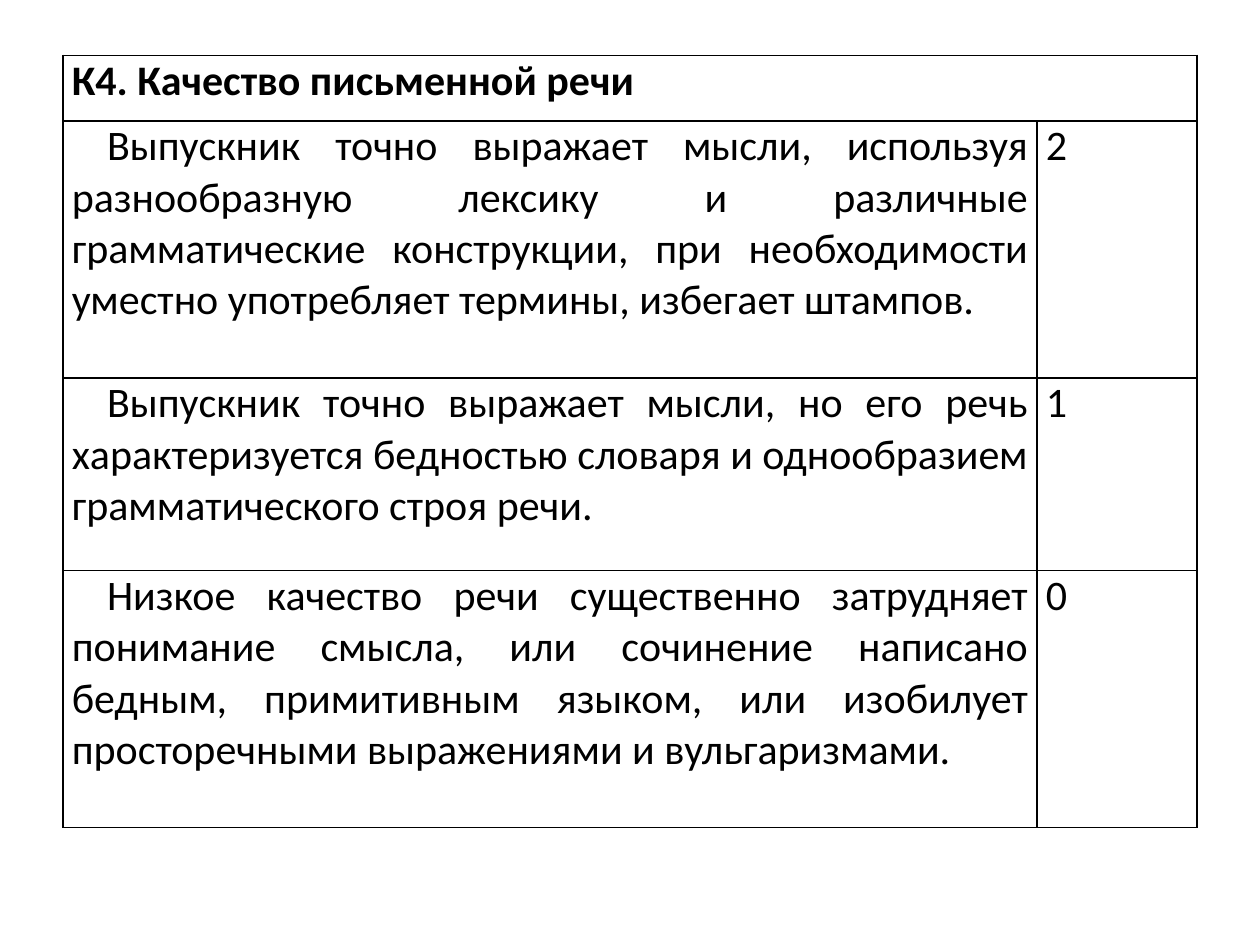
from dataclasses import dataclass

from lxml import etree
from pptx import Presentation
from pptx.dml.color import RGBColor
from pptx.enum.text import PP_ALIGN
from pptx.oxml.ns import qn
from pptx.util import Inches, Pt

JUSTIFY = PP_ALIGN.JUSTIFY
WIDE, HIGH = 10, 7.5
LEFT, TOP = 0.05 * WIDE, 0.44
COLS = (7.73, 1.27)
ROWS = (0.52, 2.04, 1.53, 2.04)
INK, PAPER = "000000", "FFFFFF"
FONT, SIZE = "Calibri", 24
INDENT, PAD = 0.28, 0.07


@dataclass
class Level:
    """A mark and the words that describe it."""

    text: str
    mark: str


TITLE = "К4. Качество письменной речи"
LEVELS = (
    Level("Выпускник точно выражает мысли, используя разнообразную лексику "
          "и различные грамматические конструкции, при необходимости "
          "уместно употребляет термины, избегает штампов.", "2"),
    Level("Выпускник точно выражает мысли, но его речь характеризуется "
          "бедностью словаря и однообразием грамматического строя речи.", "1"),
    Level("Низкое качество речи существенно затрудняет понимание смысла, "
          "или сочинение написано бедным, примитивным языком, или изобилует "
          "просторечными выражениями и вульгаризмами.", "0"),
)


def color(code: str) -> RGBColor:
    """Turn a hex string into a colour."""
    return RGBColor.from_string(code)


def frame(cell) -> None:
    """Give a cell its four borders, fill and margins."""
    props = cell._tc.get_or_add_tcPr()
    for side in ("a:lnL", "a:lnR", "a:lnT", "a:lnB"):
        line = etree.SubElement(props, qn(side), w=str(Pt(1)))
        fill = etree.SubElement(line, qn("a:solidFill"))
        etree.SubElement(fill, qn("a:srgbClr"), val=INK)
    cell.fill.solid()
    cell.fill.fore_color.rgb = color(PAPER)
    cell.margin_left = cell.margin_right = Inches(PAD)
    cell.margin_top = cell.margin_bottom = 0


def write(cell, text: str, bold: bool = False, indent: float = 0) -> None:
    """Put one justified paragraph into a cell."""
    para = cell.text_frame.paragraphs[0]
    para.alignment = JUSTIFY
    if indent:
        props = para._p.get_or_add_pPr()
        props.set("marL", "0")
        props.set("indent", str(Inches(indent)))
    run = para.add_run()
    run.text = text
    font = run.font
    font.name, font.size, font.bold = FONT, Pt(SIZE), bold
    font.color.rgb = color(INK)


def main() -> None:
    """Build the slide with the table of marks."""
    deck = Presentation()
    deck.slide_width, deck.slide_height = Inches(WIDE), Inches(HIGH)
    slide = deck.slides.add_slide(deck.slide_layouts[6])
    box = [Inches(n) for n in (LEFT, TOP, sum(COLS), sum(ROWS))]
    table = slide.shapes.add_table(len(ROWS), len(COLS), *box).table
    table.first_row = table.horz_banding = False
    for col, width in zip(table.columns, COLS):
        col.width = Inches(width)
    for row, height in zip(table.rows, ROWS):
        row.height = Inches(height)
    for cell in table.iter_cells():
        frame(cell)
    head = table.cell(0, 0)
    head.merge(table.cell(0, 1))
    write(head, TITLE, bold=True)
    for row, level in enumerate(LEVELS, 1):
        write(table.cell(row, 0), level.text, indent=INDENT)
        write(table.cell(row, 1), level.mark)
    deck.save("out.pptx")


if __name__ == "__main__":
    main()
